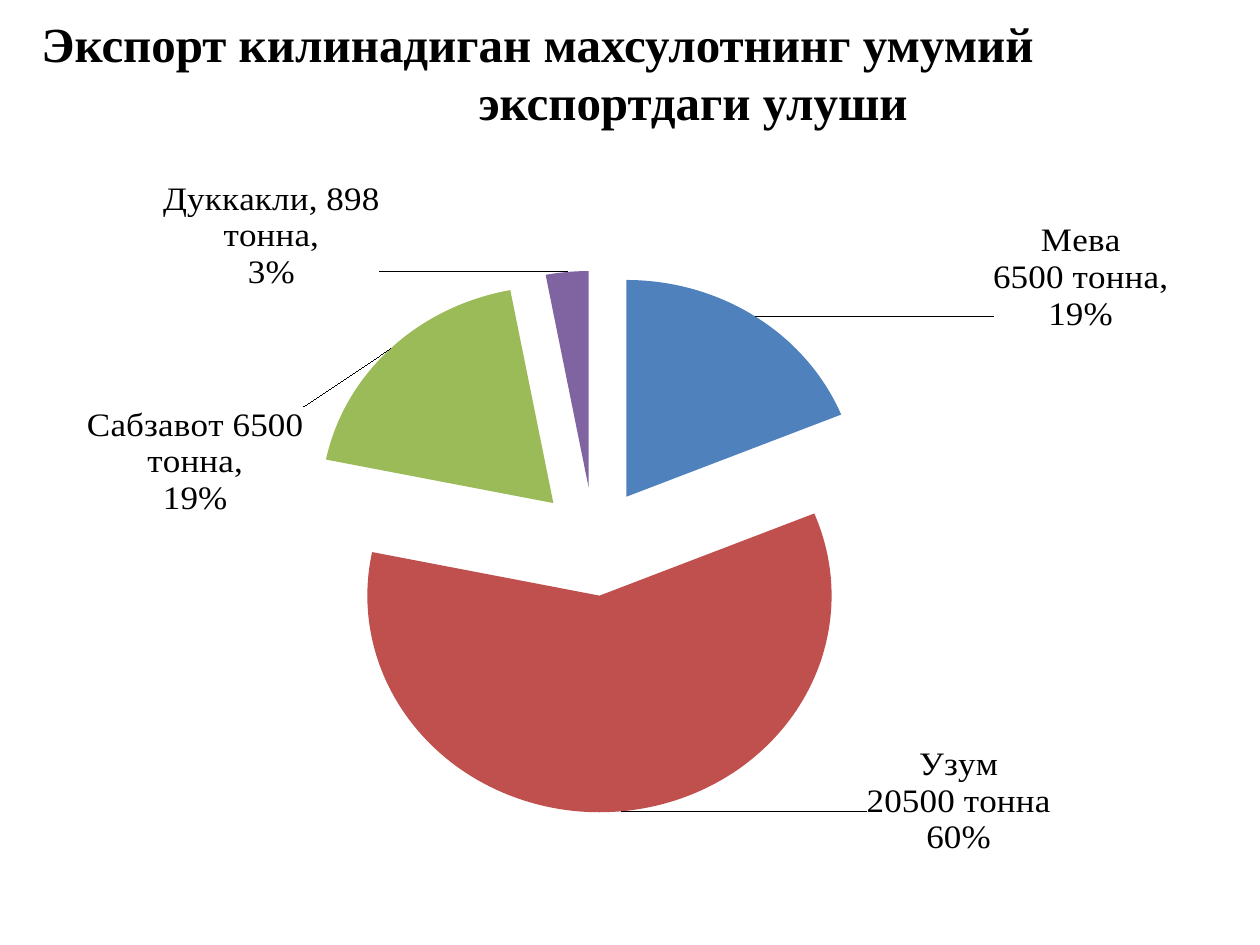
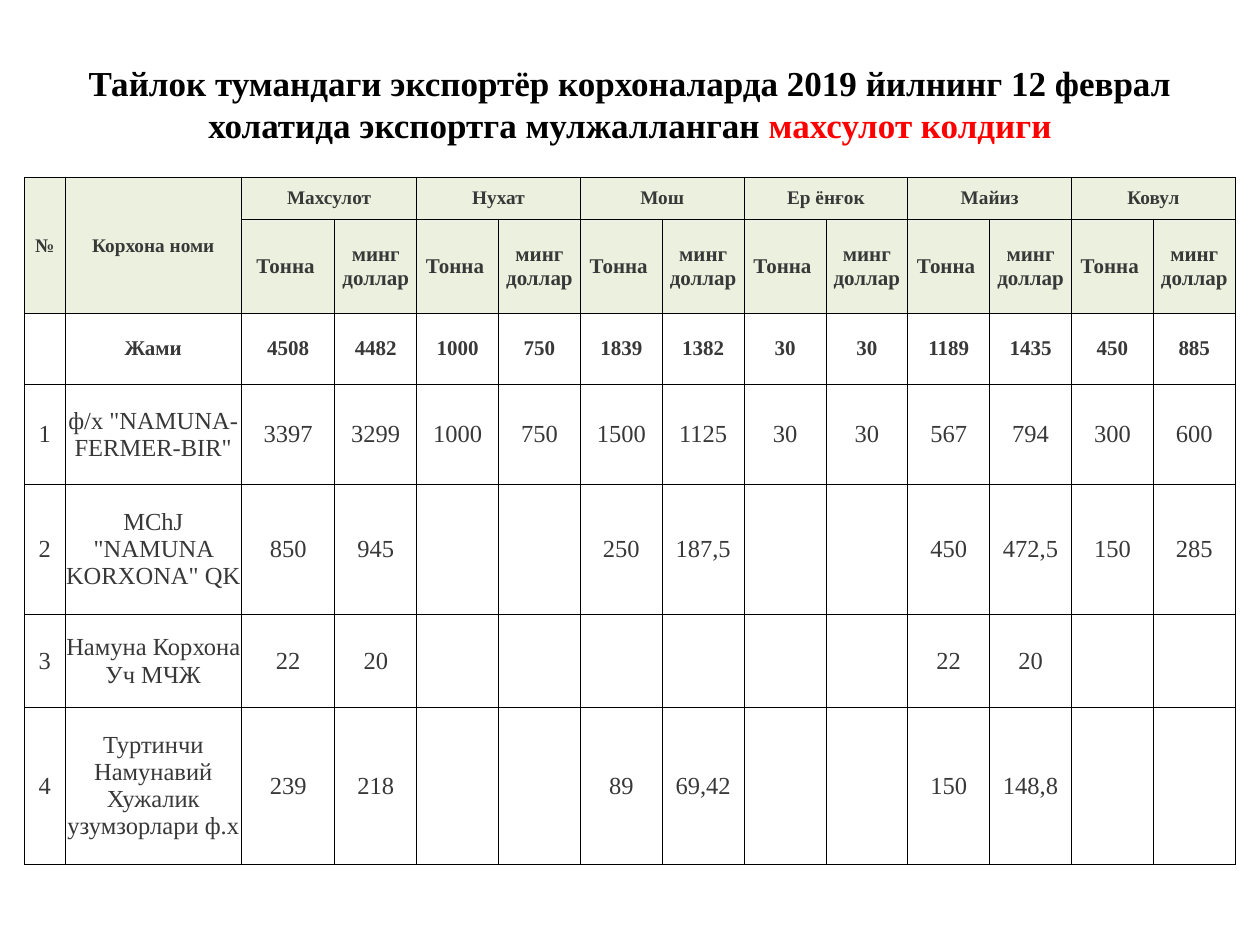
from lxml import etree
from pptx import Presentation
from pptx.chart.data import CategoryChartData
from pptx.dml.color import RGBColor
from pptx.enum.chart import XL_CHART_TYPE, XL_LABEL_POSITION
from pptx.enum.text import MSO_ANCHOR, MSO_AUTO_SIZE, PP_ALIGN
from pptx.oxml.ns import qn
from pptx.util import Cm, Pt

PIE = XL_CHART_TYPE.PIE
OUTER = XL_LABEL_POSITION.OUTSIDE_END
MIDDLE = MSO_ANCHOR.MIDDLE
FIXED = MSO_AUTO_SIZE.NONE
LEFT, CENTER = PP_ALIGN.LEFT, PP_ALIGN.CENTER

FONT = "Times New Roman"
COLORS = {
    "black": "000000", "red": "FF0000", "text": "383838", "head": "EBF1DE",
    "fruit": "4F81BD", "grape": "C0504D", "veg": "9BBB59", "bean": "8064A2",
}

SHARE = [("Экспорт килинадиган махсулотнинг умумий", LEFT, 0),
         ("экспортдаги улуши", CENTER, 2.95)]
SLICES = [
    ("Мева", 19, "fruit", ["Мева", "6500 тонна,", "19%"], (0.2, 0.03)),
    ("Узум", 60, "grape", ["Узум", "20500 тонна", "60%"], (0.21, -0.1)),
    ("Сабзавот", 19, "veg", ["Сабзавот 6500", "тонна,", "19%"], (-0.07, 0.24)),
    ("Дуккакли", 3, "bean", ["Дуккакли, 898", "тонна,", "3%"], (-0.16, 0.02)),
]
PLOT = {"x": 0.07, "y": 0.125, "w": 0.83, "h": 0.75}

STOCK = [
    ("Тайлок тумандаги экспортёр корхоналарда 2019 йилнинг 12 феврал "
     "холатида экспортга мулжалланган ", "black"),
    ("махсулот колдиги", "red"),
]
GOODS = ["Махсулот", "Нухат", "Мош", "Ер ёнғок", "Майиз", "Ковул"]
UNITS = ["Тонна ", "минг доллар"]
ROWS = [
    ["", "Жами", "4508", "4482", "1000", "750", "1839", "1382",
     "30", "30", "1189", "1435", "450", "885"],
    ["1", 'ф/х "NAMUNA-FERMER-BIR"', "3397", "3299", "1000", "750", "1500",
     "1125", "30", "30", "567", "794", "300", "600"],
    ["2", 'MChJ "NAMUNA KORXONA" QK', "850", "945", "", "", "250", "187,5",
     "", "", "450", "472,5", "150", "285"],
    ["3", "Намуна Корхона Уч МЧЖ", "22", "20", "", "", "", "",
     "", "", "22", "20", "", ""],
    ["4", "Туртинчи Намунавий Хужалик узумзорлари ф.х", "239", "218", "", "",
     "89", "69,42", "", "", "150", "148,8", "", ""],
]
WIDTHS = [0.81, 3.56, 1.88] + [1.65] * 11
HEIGHTS = [0.84, 1.9, 1.42, 2.03, 2.62, 1.88, 3.15]


def paint(name):
    return RGBColor.from_string(COLORS[name])


def write(par, text, size, color="black", bold=False):
    run = par.add_run()
    run.text = text
    run.font.name = FONT
    run.font.size = Pt(size)
    run.font.bold = bold
    run.font.color.rgb = paint(color)


def start(deck, box):
    slide = deck.slides.add_slide(deck.slide_layouts[5])
    title = slide.shapes.title
    title.left, title.top, title.width, title.height = map(Cm, box)
    frame = title.text_frame
    frame.word_wrap = True
    frame.auto_size = FIXED
    frame.vertical_anchor = MIDDLE
    return slide, frame


def lines(frame, count):
    return [frame.paragraphs[0]] + [frame.add_paragraph() for _ in range(count - 1)]


def place(layout, spots, **modes):
    manual = etree.SubElement(layout, qn("c:manualLayout"))
    for key, value in (modes | spots).items():
        etree.SubElement(manual, qn(f"c:{key}"), val=str(value))


def add_pie(slide):
    data = CategoryChartData()
    data.categories = [row[0] for row in SLICES]
    data.add_series("Series 1", [row[1] for row in SLICES])
    box = map(Cm, (0.58, 3.12, 23.5, 15.6))
    chart = slide.shapes.add_chart(PIE, *box, data).chart
    chart.has_title = chart.has_legend = False
    chart.font.name = FONT
    chart.font.size = Pt(20)
    chart.font.color.rgb = paint("black")

    plot = chart.plots[0]
    plot.vary_by_categories = True
    area = chart._chartSpace.chart.plotArea
    for old in area.findall(qn("c:layout")):
        area.remove(old)
    layout = etree.Element(qn("c:layout"))
    area.insert(0, layout)
    place(layout, PLOT, layoutTarget="inner", xMode="edge", yMode="edge")

    series = plot.series[0]
    blast = etree.Element(qn("c:explosion"), val="25")
    series._element.find(qn("c:tx")).addnext(blast)
    labels = series.data_labels
    labels.show_value = False
    labels.show_category_name = labels.show_percentage = True
    for i, (_, _, color, words, (x, y)) in enumerate(SLICES):
        point = series.points[i]
        point.format.fill.solid()
        point.format.fill.fore_color.rgb = paint(color)
        label = point.data_label
        frame = label.text_frame
        for par, text in zip(lines(frame, len(words)), words):
            write(par, text, 20)
        label.position = OUTER
        shift = etree.Element(qn("c:layout"))
        labels._element.findall(qn("c:dLbl"))[i].find(qn("c:idx")).addnext(shift)
        place(shift, {"x": x, "y": y})


def border(cell):
    props = cell._tc.get_or_add_tcPr()
    for i, side in enumerate(("lnL", "lnR", "lnT", "lnB")):
        line = etree.Element(qn(f"a:{side}"), w="6350")
        fill = etree.SubElement(line, qn("a:solidFill"))
        etree.SubElement(fill, qn("a:srgbClr"), val=COLORS["black"])
        props.insert(i, line)


def add_stock(slide):
    top = ["№", "Корхона номи"] + [text for good in GOODS for text in (good, "")]
    grid = [top, ["", ""] + UNITS * len(GOODS)] + ROWS
    box = map(Cm, (0.5, 3.58, sum(WIDTHS), sum(HEIGHTS)))
    table = slide.shapes.add_table(len(grid), len(top), *box).table
    table.first_row = table.horz_banding = False
    for col, width in zip(table.columns, WIDTHS):
        col.width = Cm(width)
    for row, height in zip(table.rows, HEIGHTS):
        row.height = Cm(height)
    for r, texts in enumerate(grid):
        size = (11, 12, 12)[r] if r < 3 else 14
        for c, text in enumerate(texts):
            cell = table.cell(r, c)
            cell.margin_left = cell.margin_right = 0
            cell.margin_top = cell.margin_bottom = 0
            cell.vertical_anchor = MIDDLE
            if r < 2:
                cell.fill.solid()
                cell.fill.fore_color.rgb = paint("head")
            else:
                cell.fill.background()
            border(cell)
            if text:
                par = cell.text_frame.paragraphs[0]
                par.alignment = CENTER
                write(par, text, size, "text", r < 3)
    for c in range(2):
        table.cell(0, c).merge(table.cell(1, c))
    for c in range(2, len(top), 2):
        table.cell(0, c).merge(table.cell(0, c + 1))


def main():
    deck = Presentation()
    deck.slide_width, deck.slide_height = Cm(25.4), Cm(19.05)

    slide, frame = start(deck, (0.58, 0.13, 23.83, 2.64))
    for par, (text, align, indent) in zip(lines(frame, len(SHARE)), SHARE):
        par.alignment = align
        par._p.get_or_add_pPr().set("marL", str(Cm(indent)))
        write(par, text, 28, bold=True)
    add_pie(slide)

    slide, frame = start(deck, (1.27, 1, 22.86, 2.18))
    par = frame.paragraphs[0]
    par.alignment = CENTER
    for text, color in STOCK:
        write(par, text, 20, color, True)
    add_stock(slide)

    deck.save("out.pptx")


if __name__ == "__main__":
    main()
